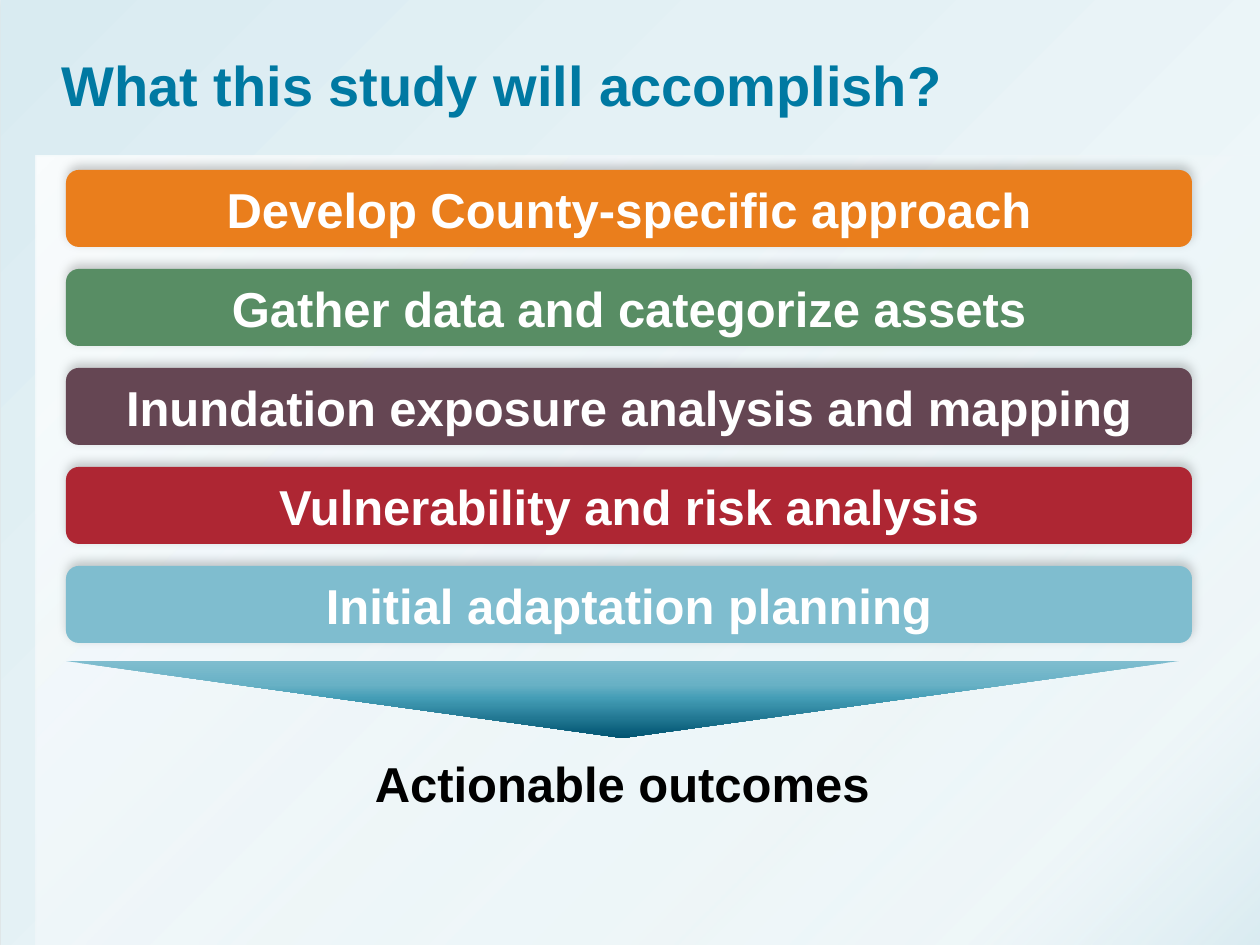
from lxml.etree import SubElement
from pptx import Presentation
from pptx.dml.color import RGBColor
from pptx.enum.shapes import MSO_SHAPE
from pptx.enum.text import MSO_ANCHOR, PP_ALIGN
from pptx.oxml.ns import qn
from pptx.util import Pt

EMU_PER_PX = 914400 / 126
FONT = "Arial"
COLORS = {
    "title": "0079A2",
    "text": "000000",
    "white": "FFFFFF",
    "orange": "EA7E1C",
    "green": "588D64",
    "plum": "654653",
    "red": "AE2633",
    "sky": "7FBDCF",
    "sky_mid": "68B1C5",
    "teal": "449DB6",
    "navy": "005370",
    "mist": "F9FCFD",
    "mist_panel": "EAF4F7",
    "mist_mid": "E4F1F5",
    "mist_dark": "D9EBF1",
}

STEPS = [
    ("Develop County-specific approach", "orange"),
    ("Gather data and categorize assets", "green"),
    ("Inundation exposure analysis and mapping", "plum"),
    ("Vulnerability and risk analysis", "red"),
    ("Initial adaptation planning", "sky"),
]
STEP_LEFT, STEP_TOP, STEP_WIDTH, STEP_HEIGHT = 66, 170, 1126, 77
STEP_PITCH = 99


def px(length):
    return round(length * EMU_PER_PX)


def add_color(parent, color, opacity=100):
    """Append an RGB colour, with its opacity in percent, to an XML element."""
    element = SubElement(parent, qn("a:srgbClr"), val=color)
    if opacity < 100:
        SubElement(element, qn("a:alpha"), val=str(opacity * 1000))


def add_plain_shape(slide, kind, left, top, width, height):
    """Add a preset shape without outline or shadow."""
    shape = slide.shapes.add_shape(kind, px(left), px(top), px(width), px(height))
    shape.line.fill.background()
    shape.shadow.inherit = False
    return shape


def set_gradient(shape, angle, stops):
    """Fill with (percent, colour name, opacity) stops; angle runs clockwise."""
    shape.fill.gradient()
    shape.fill.gradient_angle = (360 - angle) % 360
    stop_list = next(shape._element.spPr.iter(qn("a:gsLst")))
    for old_stop in list(stop_list):
        stop_list.remove(old_stop)
    for percent, name, opacity in stops:
        stop = SubElement(stop_list, qn("a:gs"), pos=str(percent * 1000))
        add_color(stop, COLORS[name], opacity)


def set_shadow(shape, opacity, blur, distance, angle):
    effects = shape._element.spPr.find(qn("a:effectLst"))
    shadow = SubElement(
        effects, qn("a:outerShdw"), blurRad=str(Pt(blur)), dist=str(Pt(distance)),
        dir=str(angle * 60000), algn="ctr", rotWithShape="0")
    add_color(shadow, "000000", opacity)


def write_text(shape, text, size=28, color="white", align=PP_ALIGN.CENTER,
               anchor=MSO_ANCHOR.MIDDLE):
    frame = shape.text_frame
    frame.word_wrap = True
    frame.vertical_anchor = anchor
    paragraph = frame.paragraphs[0]
    paragraph.alignment = align
    run = paragraph.add_run()
    run.text = text
    run.font.name = FONT
    run.font.size = Pt(size)
    run.font.bold = True
    run.font.color.rgb = RGBColor.from_string(COLORS[color])


def add_text(slide, text, left, top, width, height, **text_format):
    box = slide.shapes.add_textbox(px(left), px(top), px(width), px(height))
    write_text(box, text, **text_format)
    return box


def add_background(slide):
    backdrop = add_plain_shape(slide, MSO_SHAPE.RECTANGLE, 1, 0, 1260, 945)
    set_gradient(backdrop, 225, [
        (0, "mist", 100), (63, "mist_mid", 100), (100, "mist_dark", 100)])
    set_shadow(backdrop, opacity=35, blur=3.1, distance=1.8, angle=90)
    panel = add_plain_shape(slide, MSO_SHAPE.RECTANGLE, 36, 156, 1226, 789)
    set_gradient(panel, 45, [
        (0, "mist", 100), (85, "mist_panel", 58), (100, "mist_dark", 100)])


def add_funnel(slide):
    """Add the wide triangle that points down to the outcome."""
    funnel = add_plain_shape(
        slide, MSO_SHAPE.ISOSCELES_TRIANGLE, STEP_LEFT, 661, 1113, STEP_HEIGHT)
    funnel.rotation = 180
    set_gradient(funnel, 270, [
        (0, "sky", 100), (31, "sky_mid", 100), (48, "teal", 100), (100, "navy", 100)])


def add_step(slide, index, text, color):
    step = add_plain_shape(
        slide, MSO_SHAPE.ROUNDED_RECTANGLE, STEP_LEFT,
        STEP_TOP + index * STEP_PITCH, STEP_WIDTH, STEP_HEIGHT)
    step.fill.solid()
    step.fill.fore_color.rgb = RGBColor.from_string(COLORS[color])
    set_shadow(step, opacity=20, blur=6, distance=3, angle=270)
    write_text(step, text)


def main():
    presentation = Presentation()
    presentation.slide_width = px(1260)
    presentation.slide_height = px(945)
    slide = presentation.slides.add_slide(presentation.slide_layouts[6])

    add_background(slide)
    title = add_text(slide, "What this study will accomplish?", 49, 38, 1166, 118,
                     size=32, color="title", align=PP_ALIGN.LEFT,
                     anchor=MSO_ANCHOR.TOP)
    title.text_frame.margin_top = px(12)
    add_funnel(slide)
    add_text(slide, "Actionable outcomes ", STEP_LEFT, 712, STEP_WIDTH, 141,
             color="text")
    for index, (text, color) in enumerate(STEPS):
        add_step(slide, index, text, color)

    presentation.save("out.pptx")


if __name__ == "__main__":
    main()
